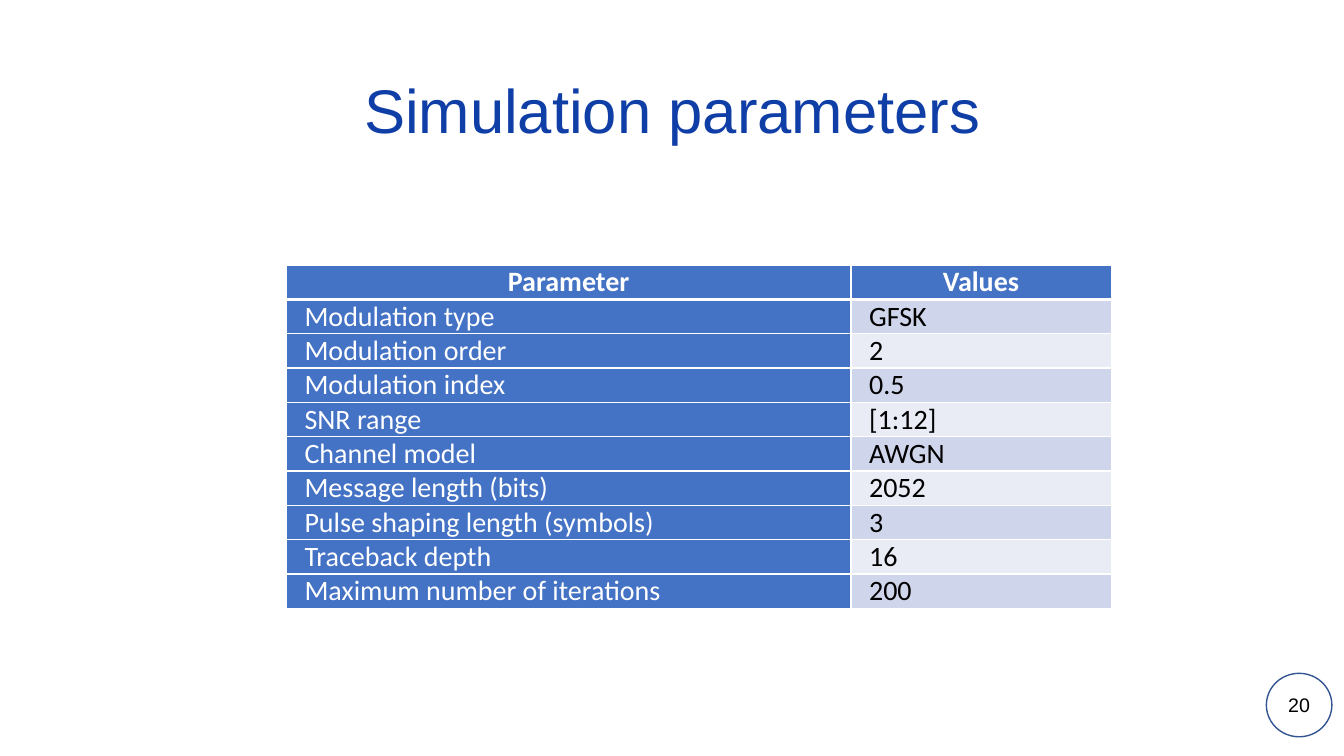
from dataclasses import dataclass

from lxml.etree import SubElement
from pptx import Presentation
from pptx.dml.color import RGBColor
from pptx.enum.shapes import MSO_SHAPE as Shape
from pptx.enum.text import MSO_ANCHOR as Anchor, MSO_AUTO_SIZE as AutoSize, PP_ALIGN as Align
from pptx.oxml.ns import qn
from pptx.util import Inches, Pt


@dataclass(frozen=True)
class Theme:
    white: str = "FFFFFF"
    black: str = "000000"
    title: str = "103EA7"
    accent: str = "4472C4"
    bands: tuple = ("CFD5EA", "E9EBF5")
    badge_line: str = "325491"
    heading_font: str = "Arial"
    table_font: str = "Calibri"
    title_size: int = 44
    table_size: int = 20
    badge_size: int = 14


THEME = Theme()

HEADER = ("Parameter", "Values")
PARAMETERS = [
    ("Modulation type", "GFSK"),
    ("Modulation order", "2"),
    ("Modulation index", "0.5"),
    ("SNR range", "[1:12]"),
    ("Channel model", "AWGN"),
    ("Message length (bits)", "2052"),
    ("Pulse shaping length (symbols)", "3"),
    ("Traceback depth", "16"),
    ("Maximum number of iterations", "200"),
]
COLUMN_WIDTHS = (5.6, 2.58)
ROW_HEIGHT = 0.33


def rgb(color):
    return RGBColor.from_string(color)


def write_text(frame, text, *, size, color, font=THEME.heading_font, bold=False,
               align=Align.CENTER, spacing=1.0):
    paragraph = frame.paragraphs[0]
    paragraph.alignment = align
    paragraph.line_spacing = spacing
    run = paragraph.add_run()
    run.text = text
    run.font.name = font
    run.font.size = Pt(size)
    run.font.bold = bold
    run.font.color.rgb = rgb(color)


def add_title(slide, text):
    title = slide.shapes.title
    title.left, title.top = Inches(0.92), Inches(0.4)
    title.width, title.height = Inches(11.5), Inches(1.45)
    title.text_frame.auto_size = AutoSize.NONE
    title.text_frame.vertical_anchor = Anchor.MIDDLE
    write_text(title.text_frame, text, size=THEME.title_size, color=THEME.title, spacing=0.9)


def add_number_badge(slide, number):
    badge = slide.shapes.add_shape(
        Shape.OVAL, Inches(12.56), Inches(6.68), Inches(0.65), Inches(0.63))
    badge.shadow.inherit = False
    badge.fill.solid()
    badge.fill.fore_color.rgb = rgb(THEME.white)
    badge.line.color.rgb = rgb(THEME.badge_line)
    badge.line.width = Pt(1)
    badge.text_frame.vertical_anchor = Anchor.MIDDLE
    write_text(badge.text_frame, number, size=THEME.badge_size, color=THEME.black)


def set_borders(cell, top=1, bottom=1):
    properties = cell._tc.get_or_add_tcPr()
    for side, width in (("L", 1), ("R", 1), ("T", top), ("B", bottom)):
        border = SubElement(properties, qn(f"a:ln{side}"), w=str(Pt(width)))
        fill = SubElement(border, qn("a:solidFill"))
        SubElement(fill, qn("a:srgbClr"), val=THEME.white)


def fill_cell(cell, text, *, fill, color, top=1, bottom=1, **text_format):
    cell.margin_left = cell.margin_right = Inches(0.18)
    cell.margin_top = cell.margin_bottom = 0
    set_borders(cell, top, bottom)
    cell.fill.solid()
    cell.fill.fore_color.rgb = rgb(fill)
    write_text(cell.text_frame, text, size=THEME.table_size, color=color,
               font=THEME.table_font, **text_format)


def add_parameter_table(slide):
    row_count = len(PARAMETERS) + 1
    table = slide.shapes.add_table(
        row_count, len(HEADER), Inches(2.84), Inches(2.63),
        Inches(sum(COLUMN_WIDTHS)), Inches(ROW_HEIGHT * row_count)).table
    table.first_col = True
    for column, width in zip(table.columns, COLUMN_WIDTHS):
        column.width = Inches(width)
    for row in table.rows:
        row.height = Inches(ROW_HEIGHT)

    for column, heading in enumerate(HEADER):
        fill_cell(table.cell(0, column), heading, fill=THEME.accent,
                  color=THEME.white, bottom=3, bold=True)
    for row, (parameter, value) in enumerate(PARAMETERS, start=1):
        top = 3 if row == 1 else 1
        fill_cell(table.cell(row, 0), parameter, fill=THEME.accent,
                  color=THEME.white, top=top, align=Align.JUSTIFY)
        fill_cell(table.cell(row, 1), value, fill=THEME.bands[(row - 1) % 2],
                  color=THEME.black, top=top, align=Align.JUSTIFY)


def main():
    presentation = Presentation()
    presentation.slide_width = Inches(13.33)
    presentation.slide_height = Inches(7.5)
    slide = presentation.slides.add_slide(presentation.slide_layouts[5])
    add_number_badge(slide, "20")
    add_title(slide, "Simulation parameters")
    add_parameter_table(slide)
    presentation.save("out.pptx")


if __name__ == "__main__":
    main()
